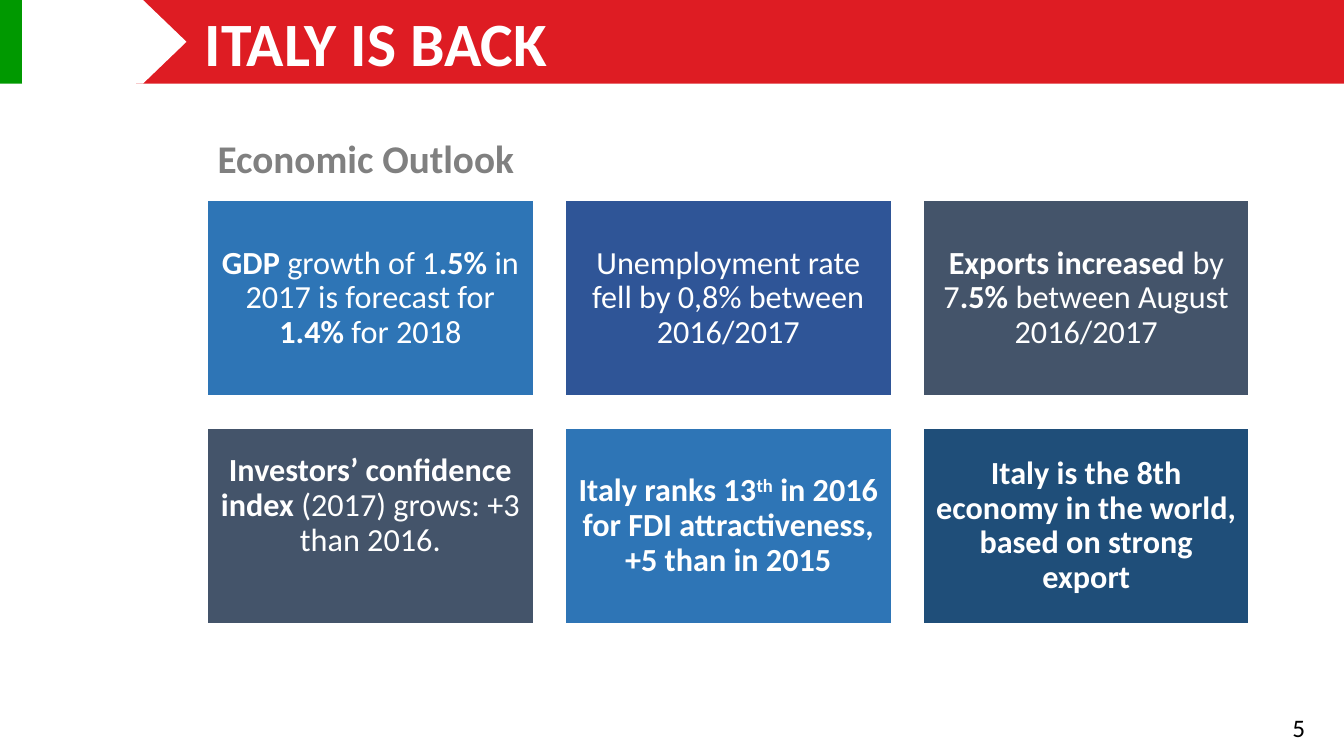
from lxml import etree
from pptx import Presentation
from pptx.dml.color import RGBColor
from pptx.enum import shapes, text
from pptx.util import Inches, Pt

FONT = "Calibri"
WHITE = "FFFFFF"
PAGE_WIDTH, PAGE_HEIGHT = 13.33, 7.5

TITLE = "ITALY IS BACK"
SUBTITLE = "Economic Outlook"
PAGE_NUMBER = "5"

# Header bands: left, width, point depth, colour
BANDS = [
    (1.35, 11.98, 0, "DE1C23"),
    (0, 0.22, 0, "009900"),
    (0.22, 1.63, 0.52, WHITE),
]
BAND_HEIGHT = 0.83

# Cards: fill, bottom inset, runs of (text, style); b = bold, ^ = superscript
CARDS = [
    ("2E75B6", 0.1, [("GDP", "b"), (" growth of 1", ""), (".5%", "b"),
                     (" in 2017 is forecast for ", ""), ("1.4%", "b"),
                     (" for 2018", "")]),
    ("2F5597", 0.1, [("Unemployment rate fell by 0,8% between 2016/2017", "")]),
    ("44546A", 0.1, [("Exports increased ", "b"), ("by 7", ""), (".5%", "b"),
                     (" between August 2016/2017", "")]),
    ("44546A", 0.5, [("Investors’ confidence index ", "b"),
                     ("(2017) grows: +3 than 2016.", "")]),
    ("2E75B6", 0.1, [("Italy ranks 13", "b"), ("th", "b^"),
                     (" in 2016 for FDI attractiveness, +5 than in 2015", "b")]),
    ("1F4E79", 0.1, [("Italy is the 8th economy in the world, "
                      "based on strong export", "b")]),
]
COLUMNS = 3
GRID_LEFT, GRID_TOP = 2.06, 1.99
CARD_WIDTH, CARD_HEIGHT, GAP = 3.23, 1.94, 0.32


def colour(value):
    return RGBColor.from_string(value)


def style(span, size, ink, bold=False):
    span.font.name = FONT
    span.font.size = Pt(size)
    span.font.bold = bold
    span.font.color.rgb = colour(ink)


def add_block(page, kind, left, top, width, height, fill):
    block = page.shapes.add_shape(
        kind, Inches(left), Inches(top), Inches(width), Inches(height))
    block.shadow.inherit = False
    block.fill.solid()
    block.fill.fore_color.rgb = colour(fill)
    block.line.fill.background()
    return block


def write_line(box, words, place, size, ink, bold=False):
    box.left, box.top, box.width, box.height = map(Inches, place)
    frame = box.text_frame
    frame.text = words
    frame.word_wrap = True
    frame.auto_size = text.MSO_AUTO_SIZE.NONE
    frame.vertical_anchor = text.MSO_ANCHOR.TOP
    para = frame.paragraphs[0]
    para.alignment = text.PP_ALIGN.LEFT
    para.line_spacing = 1.0
    style(para.runs[0], size, ink, bold)


def add_card(page, index, fill, bottom, runs):
    row, column = divmod(index, COLUMNS)
    card = add_block(page, shapes.MSO_SHAPE.RECTANGLE,
                     GRID_LEFT + column * (CARD_WIDTH + GAP),
                     GRID_TOP + row * (CARD_HEIGHT + GAP),
                     CARD_WIDTH, CARD_HEIGHT, fill)
    card.line.color.rgb = colour(WHITE)
    card.line.width = Pt(1)
    frame = card.text_frame
    frame.word_wrap = True
    frame.vertical_anchor = text.MSO_ANCHOR.MIDDLE
    frame.margin_left = frame.margin_right = frame.margin_top = Inches(0.1)
    frame.margin_bottom = Inches(bottom)
    para = frame.paragraphs[0]
    para.alignment = text.PP_ALIGN.CENTER
    para.line_spacing = 0.9
    for words, marks in runs:
        span = para.add_run()
        span.text = words
        style(span, 23, WHITE, "b" in marks)
        if "^" in marks:
            span._r.get_or_add_rPr().set("baseline", "30000")


def main():
    deck = Presentation()
    deck.slide_width, deck.slide_height = Inches(PAGE_WIDTH), Inches(PAGE_HEIGHT)
    page = deck.slides.add_slide(deck.slide_layouts[5])

    # Header bands, with the title brought in front of them
    for left, width, depth, fill in BANDS:
        band = add_block(page, shapes.MSO_SHAPE.PENTAGON,
                         left, 0, width, BAND_HEIGHT, fill)
        band.adjustments[0] = depth
    title = page.shapes.title
    page.shapes._spTree.append(title._element)
    write_line(title, TITLE, (1.93, 0, 10.6, 0.84), 44, WHITE, True)

    # Subtitle and page number
    subtitle = page.shapes.add_textbox(0, 0, 0, 0)
    write_line(subtitle, SUBTITLE, (2.06, 1.28, 4.24, 0.57), 28, "808080", True)
    number = page.shapes.add_textbox(0, 0, 0, 0)
    write_line(number, PAGE_NUMBER, (12.72, 7.02, 0.61, 0.4), 18, "000000")

    # Card grid
    for index, (fill, bottom, runs) in enumerate(CARDS):
        add_card(page, index, fill, bottom, runs)

    deck.save("out.pptx")


if __name__ == "__main__":
    main()
